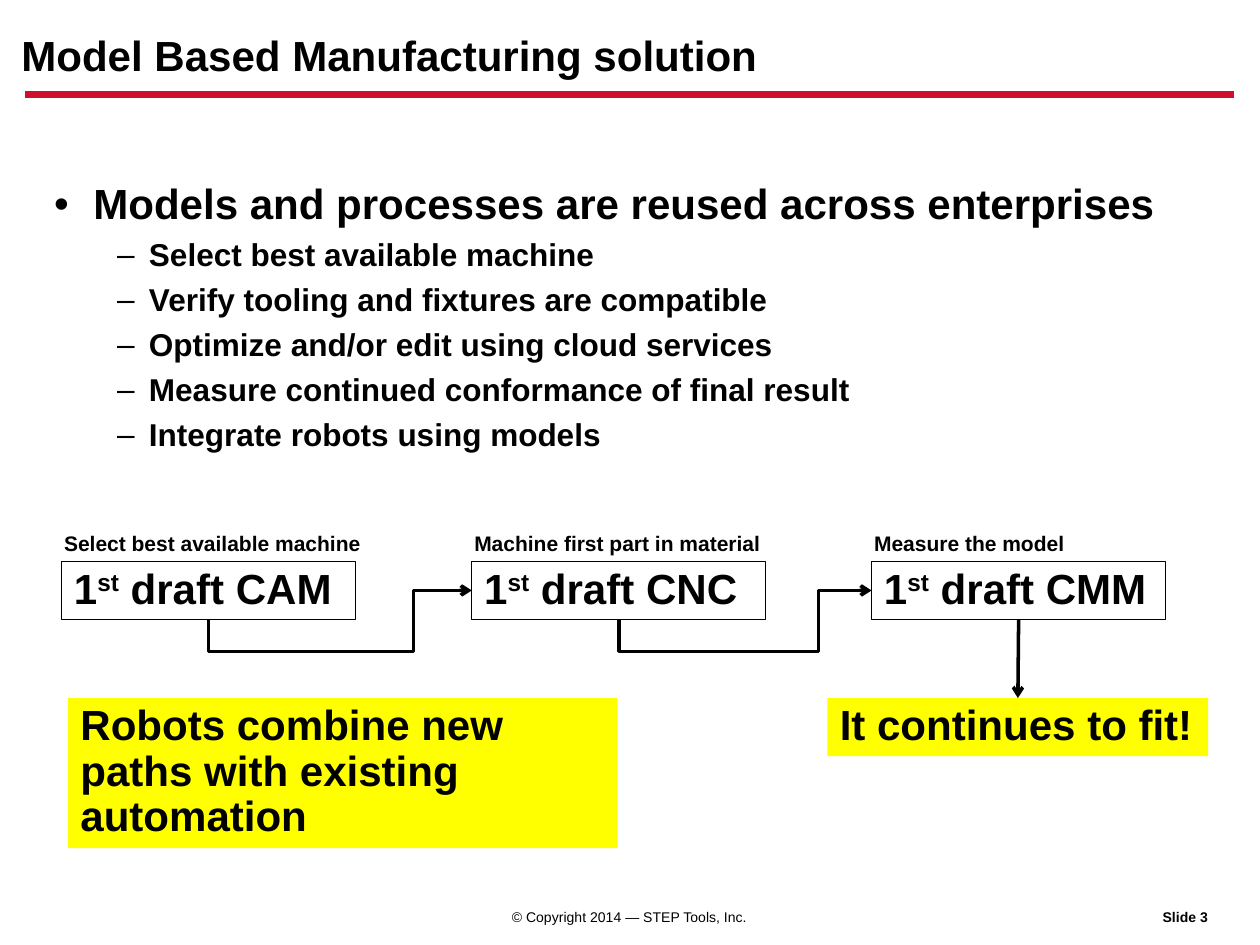
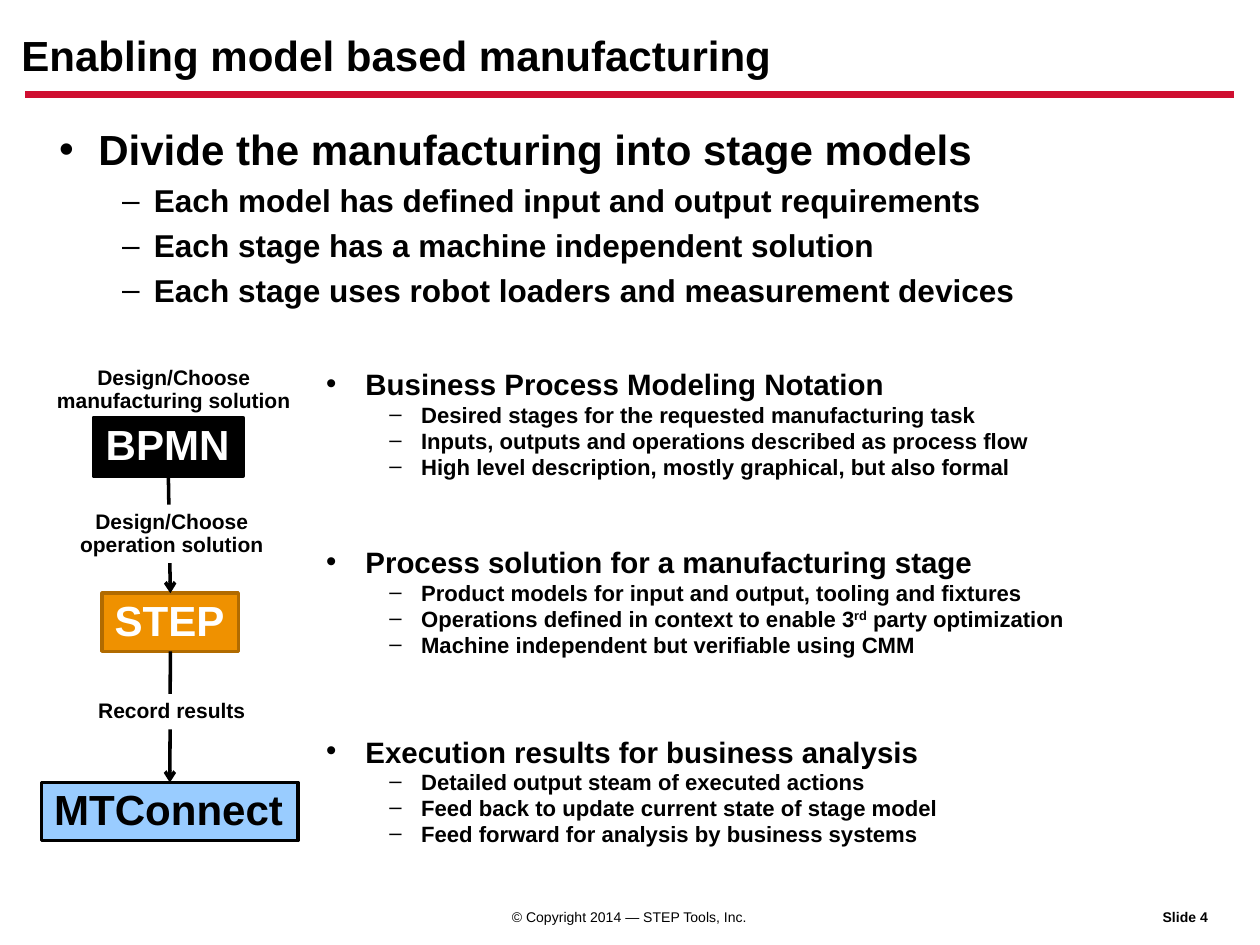
from dataclasses import dataclass
from lxml.etree import SubElement
from pptx import Presentation
from pptx.dml.color import RGBColor
from pptx.enum.shapes import MSO_CONNECTOR as Link, MSO_SHAPE as Preset
from pptx.enum.text import MSO_ANCHOR as Anchor, MSO_AUTO_SIZE as Fit, PP_ALIGN as Align
from pptx.oxml.ns import qn
from pptx.util import Cm, Pt


@dataclass(frozen=True)
class Theme:
    font: str = "Arial"
    ink: str = "000000"
    paper: str = "FFFFFF"
    rule: str = "CF0E30"
    highlight: str = "FFFF00"
    process: str = "EF9100"
    process_edge: str = "B16B00"
    results: str = "99CCFF"
    heading: float = 24
    item: float = 18
    small_heading: float = 16.8
    small_item: float = 12.6
    label: float = 12
    footer: float = 8
    spacing: float = 0.9
    tight_spacing: float = 0.7
    item_gap: float = 0.345


THEME = Theme()
BOX_HEIGHT = 1.17
LABEL_HEIGHT = 0.71
BOTTOM, LEFT, TOP = 2, 1, 0


def rgb(value):
    return RGBColor.from_string(value)


class Deck:
    def __init__(self, theme):
        self.theme = theme
        self.prs = Presentation()
        self.prs.slide_width, self.prs.slide_height = Cm(25.37), Cm(19.02)
        self.slide = None

    def new_slide(self, title, title_width, number):
        theme = self.theme
        self.slide = self.prs.slides.add_slide(self.prs.slide_layouts[1])
        heading = self.slide.shapes.title
        self.place(heading, 0.43, 0.71, title_width, 0.91)
        self.prepare(heading.text_frame, wrap=False, inset=False)
        self.fill_text(heading.text_frame.paragraphs[0], title, theme.heading)
        rule = self.slide.shapes.add_connector(
            Link.STRAIGHT, Cm(0.51), Cm(1.91), Cm(24.84), Cm(1.91))
        self.style_line(rule, theme.rule, 4)
        self.label(f"Slide {number}", 23.16, 18.19, 1.6, 0.56,
                   size=theme.footer)
        self.label("© Copyright 2014 — STEP Tools, Inc.", 10.01, 18.19, 5.33, 0.56,
                   size=theme.footer, bold=False, align=Align.CENTER)

    def place(self, shape, left, top, width, height):
        shape.left, shape.top = Cm(left), Cm(top)
        shape.width, shape.height = Cm(width), Cm(height)

    def prepare(self, frame, wrap=True, inset=True, fit=Fit.SHAPE_TO_FIT_TEXT):
        frame.word_wrap = wrap
        frame.auto_size = fit
        frame.vertical_anchor = Anchor.TOP
        frame.margin_left = frame.margin_right = Cm(0.25 if inset else 0)
        frame.margin_top = frame.margin_bottom = Cm(0.13 if inset else 0)

    def fill_text(self, paragraph, text, size, color=None, bold=True,
                  align=Align.LEFT, spacing=None, before=0):
        """Fill a paragraph; in a tuple of pieces every second one is raised."""
        paragraph.alignment = align
        paragraph.line_spacing = spacing or self.theme.spacing
        paragraph.space_before = Pt(before)
        pieces = (text,) if isinstance(text, str) else text
        for index, piece in enumerate(pieces):
            run = paragraph.add_run()
            run.text = piece
            run.font.name, run.font.size, run.font.bold = self.theme.font, Pt(size), bold
            run.font.color.rgb = rgb(color or self.theme.ink)
            if index % 2:
                run.font._element.set("baseline", "30000")

    def label(self, text, left, top, width, height, size=None, bold=True,
              align=Align.LEFT, wrap=False):
        caption = self.slide.shapes.add_textbox(Cm(left), Cm(top), Cm(width), Cm(height))
        self.prepare(caption.text_frame, wrap)
        self.fill_text(caption.text_frame.paragraphs[0], text, size or self.theme.label,
                       bold=bold, align=align)

    def box(self, text, left, top, width, height=BOX_HEIGHT, fill=None, edge=None,
            edge_width=2.0, color=None, size=None, align=Align.LEFT, wrap=True):
        panel = self.slide.shapes.add_shape(
            Preset.RECTANGLE, Cm(left), Cm(top), Cm(width), Cm(height))
        panel.shadow.inherit = False
        if fill:
            panel.fill.solid()
            panel.fill.fore_color.rgb = rgb(fill)
        else:
            panel.fill.background()
        if edge:
            panel.line.color.rgb = rgb(edge)
            panel.line.width = Pt(edge_width)
        else:
            panel.line.fill.background()
        self.prepare(panel.text_frame, wrap)
        self.fill_text(panel.text_frame.paragraphs[0], text, size or self.theme.heading,
                       color, align=align)
        return panel

    def bullets(self, heading, items, left, top, width, height, small=False, body=False):
        theme = self.theme
        if body:
            outline = self.slide.placeholders[1]
            self.place(outline, left, top, width, height)
        else:
            outline = self.slide.shapes.add_textbox(
                Cm(left), Cm(top), Cm(width), Cm(height))
        frame = outline.text_frame
        self.prepare(frame, fit=Fit.NONE)
        heading_size = theme.small_heading if small else theme.heading
        item_size = theme.small_item if small else theme.item
        spacing = theme.tight_spacing if small else theme.spacing
        self.bullet(frame.paragraphs[0], "•", 0.79, 0.79)
        self.fill_text(frame.paragraphs[0], heading, heading_size, spacing=spacing)
        for item in items:
            entry = frame.add_paragraph()
            entry.level = 1
            self.bullet(entry, "–", 1.91, 0.64)
            self.fill_text(entry, item, item_size, spacing=spacing,
                           before=round(item_size * theme.item_gap, 1))

    def bullet(self, paragraph, mark, margin, hanging):
        props = paragraph._p.get_or_add_pPr()
        props.set("marL", str(Cm(margin)))
        props.set("indent", str(-Cm(hanging)))
        SubElement(props, qn("a:buFont")).set("typeface", self.theme.font)
        SubElement(props, qn("a:buChar")).set("char", mark)

    def style_line(self, line, color, width, arrow=False):
        line.line.color.rgb = rgb(color)
        line.line.width = Pt(width)
        props = line._element.spPr
        if arrow:
            SubElement(props.find(qn("a:ln")), qn("a:tailEnd")).set("type", "arrow")
        SubElement(props, qn("a:effectLst"))

    def arrow(self, source, target, kind=Link.STRAIGHT, side=TOP):
        link = self.slide.shapes.add_connector(kind, 0, 0, 0, 0)
        link.begin_connect(source, BOTTOM)
        link.end_connect(target, side)
        self.style_line(link, self.theme.ink, 2, arrow=True)
        return link

    def step_arrow(self, source, target, drop):
        """Run below the source, then up the middle of the gap into the target."""
        link = self.arrow(source, target, Link.ELBOW, LEFT)
        x1, y1, x2, y2 = link.begin_x, link.begin_y, link.end_x, link.end_y
        rise, reach = y1 - y2, x2 - x1
        turn = (source.left + source.width + target.left) / 2 - x1
        link.left, link.top = (x1 + x2 - rise) // 2, (y1 + y2 - reach) // 2
        link.width, link.height = rise, reach
        props = link._element.spPr
        frame = props.find(qn("a:xfrm"))
        for key, value in (("rot", "5400000"), ("flipH", "1"), ("flipV", "1")):
            frame.set(key, value)
        outline = props.find(qn("a:prstGeom"))
        outline.set("prst", "bentConnector4")
        guides = outline.find(qn("a:avLst"))
        for name, share in (("adj1", -Cm(drop) / rise), ("adj2", turn / reach)):
            guide = SubElement(guides, qn("a:gd"))
            guide.set("name", name)
            guide.set("fmla", f"val {round(share * 100000)}")


def solution_slide(deck):
    theme = deck.theme
    deck.new_slide("Model Based Manufacturing solution", 14.96, 3)
    deck.bullets("Models and processes are reused across enterprises", (
        "Select best available machine",
        "Verify tooling and fixtures are compatible",
        "Optimize and/or edit using cloud services",
        "Measure continued conformance of final result",
        "Integrate robots using models",
    ), 0.84, 3.56, 23.7, 7.95, body=True)
    stages = []
    for tool, caption, left, caption_width in (
            ("CAM", "Select best available machine", 1.24, 6.55),
            ("CNC", "Machine first part in material", 9.5, 6.32),
            ("CMM", "Measure the model", 17.55, 4.39)):
        stages.append(deck.box(("1", "st", f" draft {tool}"), left, 11.3, 5.92,
                               edge=theme.ink, edge_width=0.75))
        deck.label(caption, left - 0.2, 10.6, caption_width, LABEL_HEIGHT)
    for source, target in zip(stages, stages[1:]):
        deck.step_arrow(source, target, 0.64)
    outcome = deck.box("It continues to fit!", 16.66, 14.05, 7.67,
                       fill=theme.highlight, wrap=False)
    deck.arrow(stages[-1], outcome)
    deck.box("Robots combine new paths with existing automation",
             1.37, 14.05, 11.07, 3.02, fill=theme.highlight)


def enabling_slide(deck):
    theme = deck.theme
    deck.new_slide("Enabling model based manufacturing", 15.24, 4)
    deck.bullets("Divide the manufacturing into stage models", (
        "Each model has defined input and output requirements",
        "Each stage has a machine independent solution",
        "Each stage uses robot loaders and measurement devices",
    ), 0.94, 2.46, 21.51, 6.1, body=True)
    for top, heading, items in (
            (7.44, "Business Process Modeling Notation", (
                "Desired stages for the requested manufacturing task",
                "Inputs, outputs and operations described as process flow",
                "High level description, mostly graphical, but also formal")),
            (11.02, "Process solution for a manufacturing stage", (
                "Product models for input and output, tooling and fixtures",
                ("Operations defined in context to enable 3", "rd",
                 " party optimization"),
                "Machine independent but verifiable using CMM")),
            (14.83, "Execution results for business analysis", (
                "Detailed output steam of executed actions",
                "Feed back to update current state of stage model",
                "Feed forward for analysis by business systems"))):
        deck.bullets(heading, items, 6.32, top, 18.21, 2.51, small=True)
    standards = [
        deck.box(name, left, top, width, fill=fill, edge=edge, color=color, wrap=False)
        for name, left, top, width, fill, edge, color in (
            ("BPMN", 1.88, 8.41, 3.02, theme.ink, theme.ink, theme.paper),
            ("STEP", 2.06, 11.94, 2.74, theme.process, theme.process_edge, theme.paper),
            ("MTConnect", 0.84, 15.75, 5.16, theme.results, theme.ink, theme.ink))]
    for source, target in zip(standards, standards[1:]):
        deck.arrow(source, target)
    deck.label("Design/Choose manufacturing solution", 0.64, 7.26, 5.72, BOX_HEIGHT,
               align=Align.CENTER, wrap=True)
    for caption, top, height in (
            ("Design/Choose operation solution", 10.16, BOX_HEIGHT),
            ("Record results", 13.97, LABEL_HEIGHT)):
        deck.box(caption, 0.82, top, 5.28, height, fill=theme.paper,
                 size=theme.label, align=Align.CENTER)


def main():
    deck = Deck(THEME)
    solution_slide(deck)
    enabling_slide(deck)
    deck.prs.save("out.pptx")


if __name__ == "__main__":
    main()
